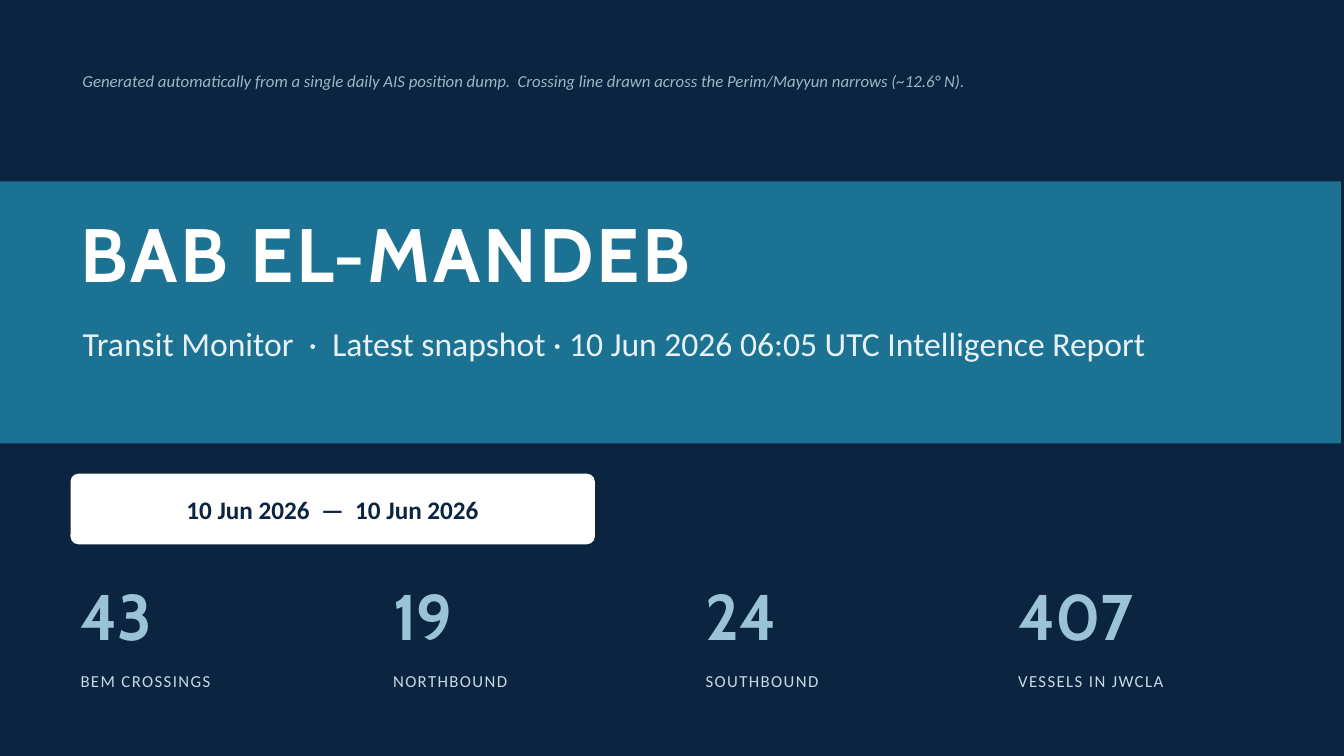
from pptx import Presentation
from pptx.dml.color import RGBColor as Rgb
from pptx.enum.shapes import MSO_SHAPE as Preset
from pptx.enum.text import MSO_ANCHOR as Anchor, MSO_AUTO_SIZE as AutoSize, PP_ALIGN as Align
from pptx.util import Pt

COLOURS = {
    "navy": "0B2440",
    "teal": "1C7293",
    "white": "FFFFFF",
    "subtitle": "E8F1F5",
    "figure": "9AC4D6",
    "label": "C9D9E2",
    "note": "9FB6C4",
}
FORMATS = {
    "title": {"name": "Cabin", "size": Pt(54), "bold": True},
    "subtitle": {"name": "Calibri", "size": Pt(24)},
    "period": {"name": "Calibri", "size": Pt(18), "bold": True},
    "figure": {"name": "Cabin", "size": Pt(46), "bold": True},
    "label": {"name": "Calibri", "size": Pt(12)},
    "note": {"name": "Calibri", "size": Pt(12), "italic": True},
}
STATISTICS = [
    ("43", "BEM CROSSINGS"),
    ("19", "NORTHBOUND"),
    ("24", "SOUTHBOUND"),
    ("407", "VESSELS IN JWCLA"),
]


def place(shape, left, top, width, height):
    """Move and size a shape, in points."""
    box = {"left": left, "top": top, "width": width, "height": height}
    for name, value in box.items():
        setattr(shape, name, Pt(value))


def write(shape, text, style, colour, spacing=0, alignment=Align.LEFT):
    """Put one formatted line of text into a shape."""
    frame = shape.text_frame
    frame_format = {
        "word_wrap": True,
        "auto_size": AutoSize.NONE,
        "vertical_anchor": Anchor.MIDDLE,
    }
    for name, value in frame_format.items():
        setattr(frame, name, value)
    paragraph = frame.paragraphs[0]
    paragraph.alignment = alignment
    paragraph.space_before = Pt(0)
    run = paragraph.add_run()
    run.text = text
    for name, value in FORMATS[style].items():
        setattr(run.font, name, value)
    run.font.color.rgb = Rgb.from_string(COLOURS[colour])
    if spacing:
        run._r.get_or_add_rPr().set("spc", str(spacing * 100))


def add_text(slide, box, *text_format):
    """Add a text box holding one line."""
    write(slide.shapes.add_textbox(*map(Pt, box)), *text_format)


def add_panel(slide, preset, box, colour):
    """Add a flat filled shape without an outline."""
    panel = slide.shapes.add_shape(preset, *map(Pt, box))
    panel.shadow.inherit = False
    panel.fill.solid()
    panel.fill.fore_color.rgb = Rgb.from_string(COLOURS[colour])
    panel.line.fill.background()
    return panel


def add_banner(slide, left, top, width, height):
    """Build the teal band with the title and subtitle on it."""
    band = add_panel(slide, Preset.RECTANGLE, (left, top, width, height), "teal")
    title, subtitle = slide.shapes.title, slide.placeholders[1]
    title.element.addprevious(band.element)
    place(title, left + 50.4, top + 10.8, 856.8, 79.2)
    write(title, "BAB EL-MANDEB", "title", "white", 2)
    place(subtitle, left + 51.84, top + 90, 856.8, 50.4)
    write(
        subtitle,
        "Transit Monitor  ·  Latest snapshot · 10 Jun 2026 06:05 UTC Intelligence Report",
        "subtitle",
        "subtitle",
    )


def add_period(slide, left, top, width, height):
    """Build the rounded box with the reporting period."""
    pill = add_panel(slide, Preset.ROUNDED_RECTANGLE, (left, top, width, height), "white")
    pill.adjustments[0] = 0.11
    write(pill, "10 Jun 2026  —  10 Jun 2026", "period", "navy", 0, Align.CENTER)


def add_statistics(slide, left, top, width, gap):
    """Build the row of figures with their labels."""
    for index, (figure, label) in enumerate(STATISTICS):
        column = left + index * (width + gap)
        add_text(slide, (column, top, width, 64.8), figure, "figure", "figure")
        add_text(slide, (column, top + 64.8, width, 28.8), label, "label", "label", 1)


def add_cover(presentation):
    """Build the cover slide."""
    slide = presentation.slides.add_slide(presentation.slide_layouts[0])
    background = slide.background.fill
    background.solid()
    background.fore_color.rgb = Rgb.from_string(COLOURS["navy"])
    add_banner(slide, 0, 129.6, 957.6, 187.2)
    add_period(slide, 50.4, 338.4, 374.4, 50.4)
    add_statistics(slide, 50.4, 406.8, 205.2, 18)
    add_text(
        slide,
        (51.84, 39.6, 856.8, 36),
        "Generated automatically from a single daily AIS position dump.  "
        "Crossing line drawn across the Perim/Mayyun narrows (~12.6° N).",
        "note",
        "note",
    )


def main():
    """Create the presentation and save it."""
    presentation = Presentation()
    presentation.slide_width = Pt(959.76)
    presentation.slide_height = Pt(540)
    add_cover(presentation)
    presentation.save("out.pptx")


if __name__ == "__main__":
    main()
